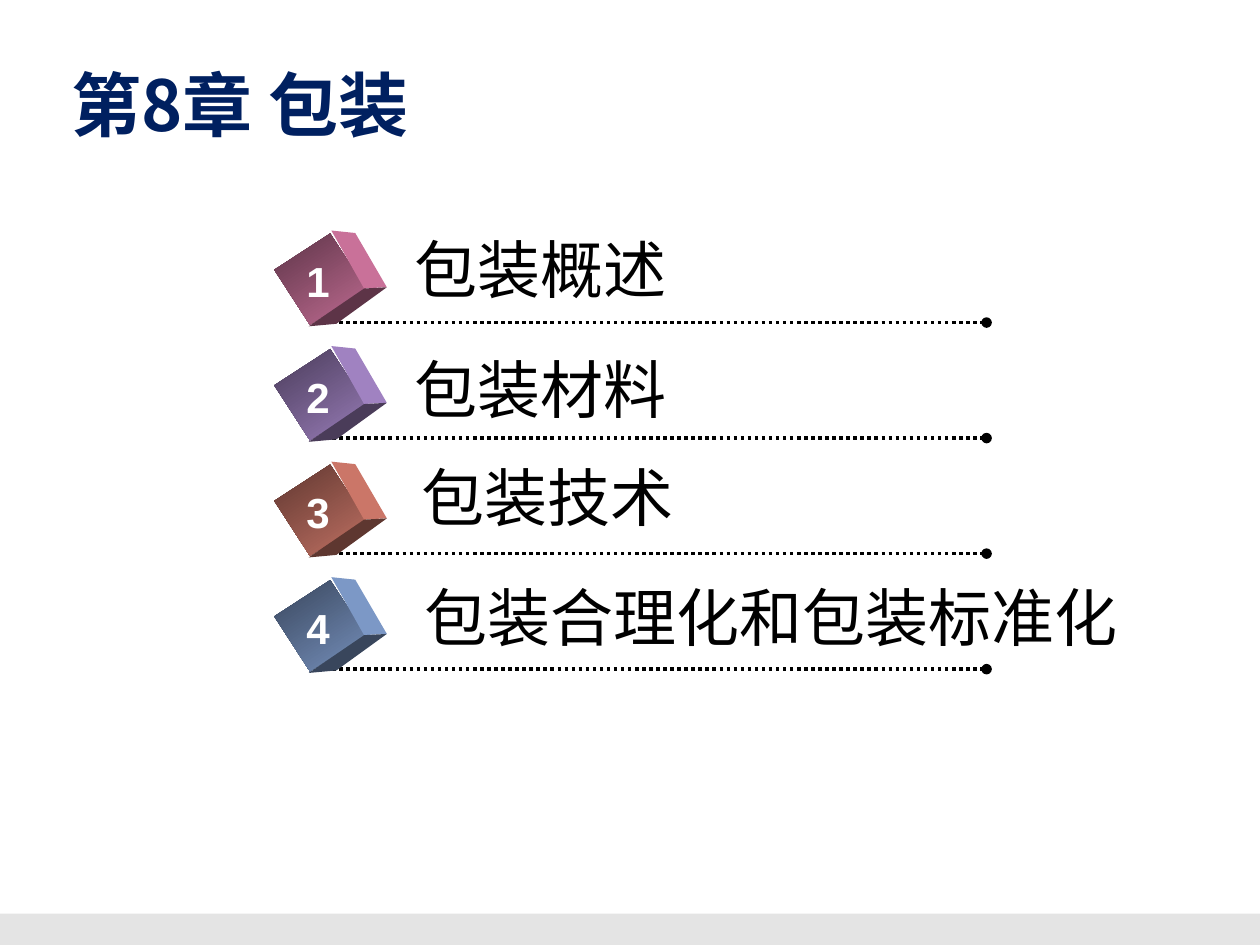
"""Build the chapter contents slide with four numbered cubes."""
from dataclasses import dataclass

import lxml.etree
import pptx
import pptx.dml.color
import pptx.enum.dml
import pptx.enum.shapes
import pptx.enum.text
import pptx.oxml.ns
import pptx.util

WIDTH, HEIGHT = 10, 7.5
FIRST_ROW, ROW_HEIGHT = 1.83, 0.917
SIDE_FACE = ((2.63, 0), (2.82, 0.02), (3.07, 0.45), (2.89, 0.46))
BOTTOM_FACE = ((2.89, 0.46), (3.07, 0.45), (2.67, 0.74), (2.45, 0.76))
TITLE_FORMAT = {"size": pptx.util.Pt(40), "name": "Noto Sans CJK JP", "bold": True}
LABEL_FORMAT = {"size": pptx.util.Pt(36), "name": "Noto Sans CJK SC", "bold": False}
NUMBER_FORMAT = {"size": pptx.util.Pt(24), "name": "Arial", "bold": True}


@dataclass(frozen=True)
class Box:
    """Hold a position and size in inches."""

    left: float
    top: float
    width: float
    height: float

    def lengths(self) -> list[int]:
        """Return the four lengths as slide units."""
        return [pptx.util.Inches(value) for value in
                (self.left, self.top, self.width, self.height)]


@dataclass(frozen=True)
class Topic:
    """Describe one contents row."""

    label: str
    color: str
    box: Box
    wrap: bool = False


TOPICS = (
    Topic("包装概述", "D87AA5", Box(3.19, 1.78, 2.2, 0.7)),
    Topic("包装材料", "AC8CD0", Box(3.19, 2.73, 2.22, 0.71)),
    Topic("包装技术", "DA7F70", Box(3.25, 3.59, 2.22, 0.71)),
    Topic("包装合理化和包装标准化", "85A3D5", Box(3.27, 4.54, 6.54, 0.71), True),
)


def rgb(color: str) -> pptx.dml.color.RGBColor:
    """Convert a hex string to a colour."""
    return pptx.dml.color.RGBColor.from_string(color)


def shade(color: str, share: float) -> str:
    """Darken a hex colour to a share of its brightness."""
    return "".join(f"{round(int(color[i:i + 2], 16) * share):02X}" for i in (0, 2, 4))


def paint(shape, color: str) -> None:
    """Give a shape a plain fill without line or shadow."""
    shape.shadow.inherit = False
    shape.fill.solid()
    shape.fill.fore_color.rgb = rgb(color)
    shape.line.fill.background()


def add_text(slide, text: str, box: Box, color: str, values: dict,
             wrap: bool = False, centered: bool = False, middle: bool = False) -> None:
    """Add a one-paragraph text box."""
    frame = slide.shapes.add_textbox(*box.lengths()).text_frame
    frame.word_wrap = wrap
    anchors = pptx.enum.text.MSO_ANCHOR
    frame.vertical_anchor = anchors.MIDDLE if middle else anchors.TOP
    paragraph = frame.paragraphs[0]
    alignments = pptx.enum.text.PP_ALIGN
    paragraph.alignment = alignments.CENTER if centered else alignments.LEFT
    run = paragraph.add_run()
    run.text = text
    for name, value in values.items():
        setattr(run.font, name, value)
    run.font.color.rgb = rgb(color)
    lxml.etree.SubElement(run.font._element, pptx.oxml.ns.qn("a:ea"),
                          typeface=values["name"])


def add_rule(slide, row_top: float) -> None:
    """Draw the dotted rule with a round end."""
    left, right, level = (pptx.util.Inches(value) for value in (2.58, 7.83, row_top + 0.73))
    connector = slide.shapes.add_connector(
        pptx.enum.shapes.MSO_CONNECTOR.STRAIGHT, left, level, right, level)
    line = connector.line
    line.color.rgb = rgb("000000")
    line.width = pptx.util.Pt(2)
    line.dash_style = pptx.enum.dml.MSO_LINE.ROUND_DOT
    properties = connector._element.spPr
    lxml.etree.SubElement(line._get_or_add_ln(), pptx.oxml.ns.qn("a:tailEnd"), type="oval")
    lxml.etree.SubElement(properties, pptx.oxml.ns.qn("a:effectLst"))


def add_face(slide, points: tuple, row_top: float, color: str) -> None:
    """Draw one visible side of a cube."""
    corners = [(pptx.util.Inches(x), pptx.util.Inches(row_top + y)) for x, y in points]
    builder = slide.shapes.build_freeform(*corners[0])
    builder.add_line_segments(corners[1:], close=True)
    paint(builder.convert_to_shape(), color)


def add_cube(slide, row_top: float, color: str) -> None:
    """Draw a tilted cube with a shaded front."""
    front = slide.shapes.add_shape(pptx.enum.shapes.MSO_SHAPE.RECTANGLE,
                                   *Box(2.28, row_top + 0.12, 0.52, 0.53).lengths())
    paint(front, color)
    front.rotation = 57
    front.fill.gradient()
    front.fill.gradient_angle = 0
    for stop, share in zip(front.fill.gradient_stops, (0.43, 0.88)):
        stop.color.rgb = rgb(shade(color, share))
    add_face(slide, SIDE_FACE, row_top, shade(color, 0.93))
    add_face(slide, BOTTOM_FACE, row_top, shade(color, 0.43))


def add_topic(slide, index: int, topic: Topic) -> None:
    """Draw one contents row."""
    row_top = FIRST_ROW + index * ROW_HEIGHT
    add_rule(slide, row_top)
    add_cube(slide, row_top, topic.color)
    add_text(slide, str(index + 1), Box(2.33, row_top + 0.15, 0.39, 0.5),
             "FFFFFF", NUMBER_FORMAT, centered=True)
    add_text(slide, topic.label, topic.box, "000000", LABEL_FORMAT, wrap=topic.wrap)


def main() -> None:
    """Build and save the presentation."""
    presentation = pptx.Presentation()
    presentation.slide_width = pptx.util.Inches(WIDTH)
    presentation.slide_height = pptx.util.Inches(HEIGHT)
    slide = presentation.slides.add_slide(presentation.slide_layouts[6])
    footer = slide.shapes.add_shape(pptx.enum.shapes.MSO_SHAPE.RECTANGLE,
                                    *Box(0, HEIGHT - 0.25, WIDTH, 0.25).lengths())
    paint(footer, "E4E4E4")
    add_text(slide, "第8章 包装", Box(0.47, 0.31, 7.36, 1.03), "002060",
             TITLE_FORMAT, wrap=True, middle=True)
    for index, topic in enumerate(TOPICS):
        add_topic(slide, index, topic)
    presentation.save("out.pptx")


if __name__ == "__main__":
    main()
